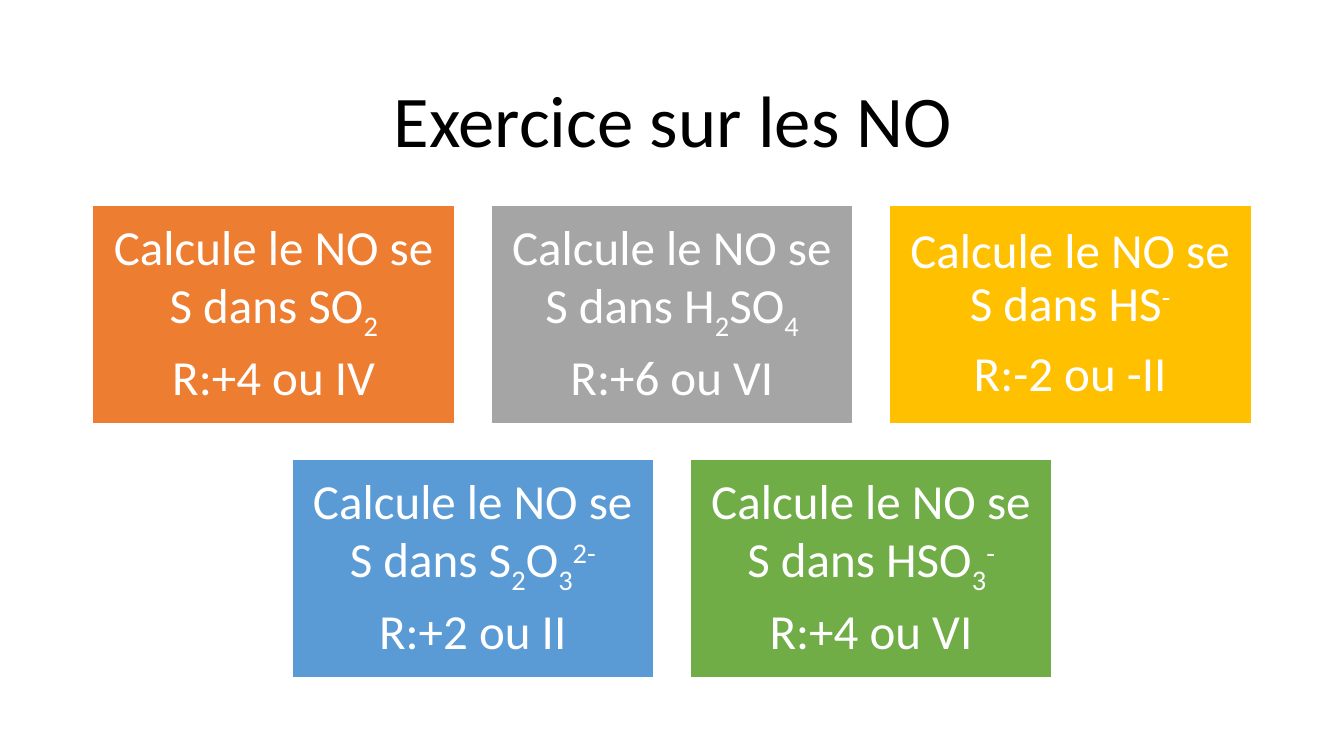
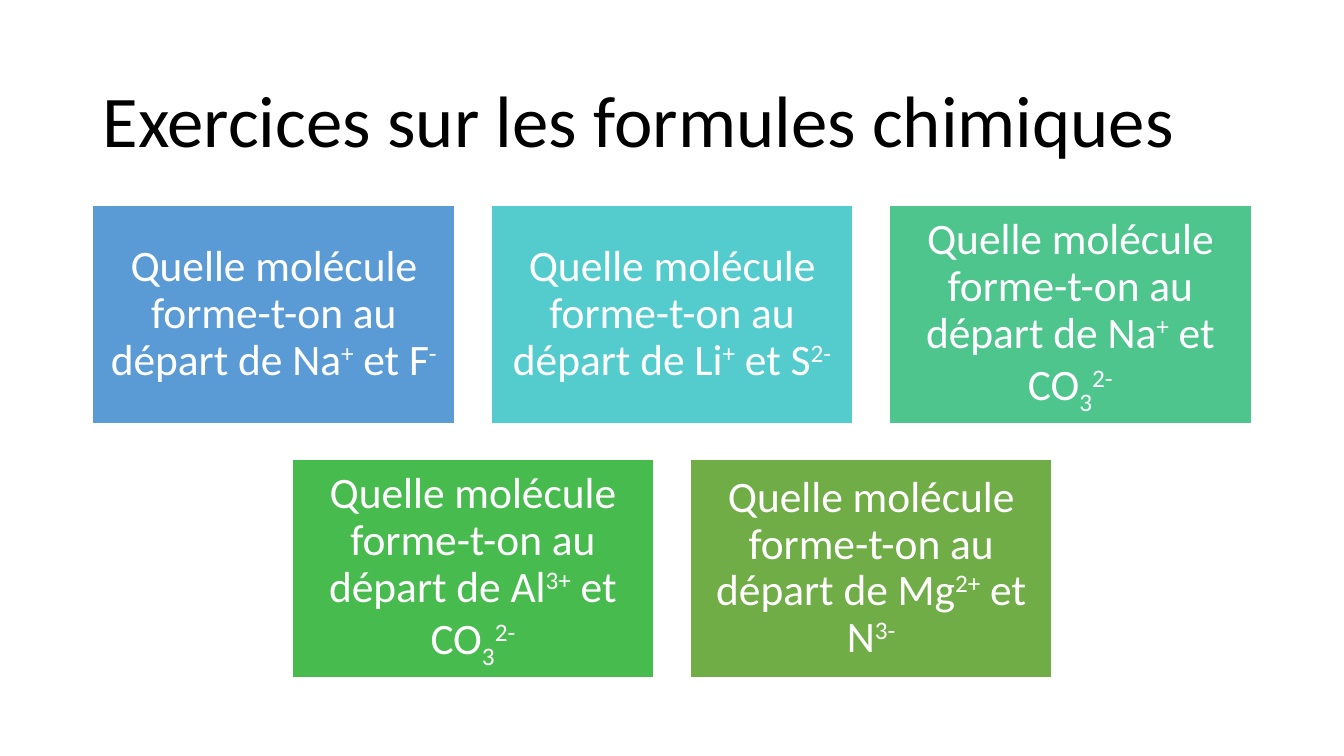
import pptx
import pptx.util
import pptx.dml.color
import pptx.enum.shapes
import pptx.enum.text

Inches = pptx.util.Inches
Pt = pptx.util.Pt
RGBColor = pptx.dml.color.RGBColor
ALIGN = pptx.enum.text.PP_ALIGN
MIDDLE = pptx.enum.text.MSO_ANCHOR.MIDDLE
RECT = pptx.enum.shapes.MSO_SHAPE.RECTANGLE

BLACK = RGBColor(0x00, 0x00, 0x00)
WHITE = RGBColor(0xFF, 0xFF, 0xFF)
ORANGE = RGBColor(0xED, 0x7D, 0x31)
GRAY = RGBColor(0xA5, 0xA5, 0xA5)
GOLD = RGBColor(0xFF, 0xC0, 0x00)
BLUE = RGBColor(0x5B, 0x9B, 0xD5)
GREEN = RGBColor(0x70, 0xAD, 0x47)
AQUA = RGBColor(0x54, 0xCC, 0xCD)
MINT = RGBColor(0x4D, 0xC5, 0x8D)
LEAF = RGBColor(0x48, 0xBB, 0x4F)

WIDE, HIGH = 13.33, 7.5
SHIFT = {"_": "-25000", "^": "30000"}


def write(frame, lines, size, color, align=ALIGN.CENTER, after=0, inset=None):
    frame.word_wrap = True
    frame.vertical_anchor = MIDDLE
    if inset is not None:
        frame.margin_left = frame.margin_right = Inches(inset)
        frame.margin_top = frame.margin_bottom = Inches(inset)
    for place, line in enumerate(lines):
        para = frame.add_paragraph() if place else frame.paragraphs[0]
        para.alignment = align
        para.line_spacing = 0.9
        para.space_after = Pt(after)
        for part in line.split("|"):
            run = para.add_run()
            run.text = part.lstrip("_^")
            run.font.name = "Calibri"
            run.font.size = Pt(size)
            run.font.color.rgb = color
            if part[0] in SHIFT:
                run._r.get_or_add_rPr().set("baseline", SHIFT[part[0]])


class Deck:
    card_wide, card_high, gap, top = 3.59, 2.16, 0.36, 2.04
    per_row = 3

    def __init__(self):
        self.show = pptx.Presentation()
        self.show.slide_width = Inches(WIDE)
        self.show.slide_height = Inches(HIGH)
        self.slide = None

    def page(self):
        self.slide = self.show.slides.add_slide(self.show.slide_layouts[6])

    def title(self, text, align):
        box = self.slide.shapes.add_textbox(
            Inches(0.92), Inches(0.61), Inches(11.5), Inches(1.24))
        write(box.text_frame, [text], 52, BLACK, align)

    def card(self, left, top, fill, lines, size, inset):
        card = self.slide.shapes.add_shape(
            RECT, Inches(left), Inches(top),
            Inches(self.card_wide), Inches(self.card_high))
        card.shadow.inherit = False
        card.fill.solid()
        card.fill.fore_color.rgb = fill
        card.line.color.rgb = WHITE
        card.line.width = Pt(1)
        write(card.text_frame, lines, size, WHITE,
              after=0.35 * size, inset=inset)

    def grid(self, cards, size, inset):
        for start in range(0, len(cards), self.per_row):
            row = cards[start:start + self.per_row]
            step = self.card_wide + self.gap
            left = (WIDE - len(row) * step + self.gap) / 2
            top = self.top + start // self.per_row * (self.card_high + self.gap)
            for col, (fill, lines) in enumerate(row):
                self.card(left + col * step, top, fill, lines, size, inset)


def main():
    deck = Deck()

    deck.page()
    deck.title("Exercice sur les NO", ALIGN.CENTER)
    tasks = [
        (ORANGE, "SO|_2", "+4 ou IV"),
        (GRAY, "H|_2|SO|_4", "+6 ou VI"),
        (GOLD, "HS|^-", "-2 ou -II"),
        (BLUE, "S|_2|O|_3|^2-", "+2 ou II"),
        (GREEN, "HSO|_3|^-", "+4 ou VI"),
    ]
    deck.grid([(fill, ["Calcule le NO se S dans " + ion, "R:" + reply])
               for fill, ion, reply in tasks], size=35, inset=0.15)

    deck.page()
    deck.title("Exercices sur les formules chimiques", ALIGN.LEFT)
    pairs = [
        (BLUE, "Na|^+", "F|^-"),
        (AQUA, "Li|^+", "S|^2-"),
        (MINT, "Na|^+", "CO|_3|^2-"),
        (LEAF, "Al|^3+", "CO|_3|^2-"),
        (GREEN, "Mg|^2+", "N|^3-"),
    ]
    deck.grid([(fill, [f"Quelle molécule forme-t-on au départ de {plus}| et {minus}"])
               for fill, plus, minus in pairs], size=31, inset=0.13)

    deck.show.save("out.pptx")


if __name__ == "__main__":
    main()
